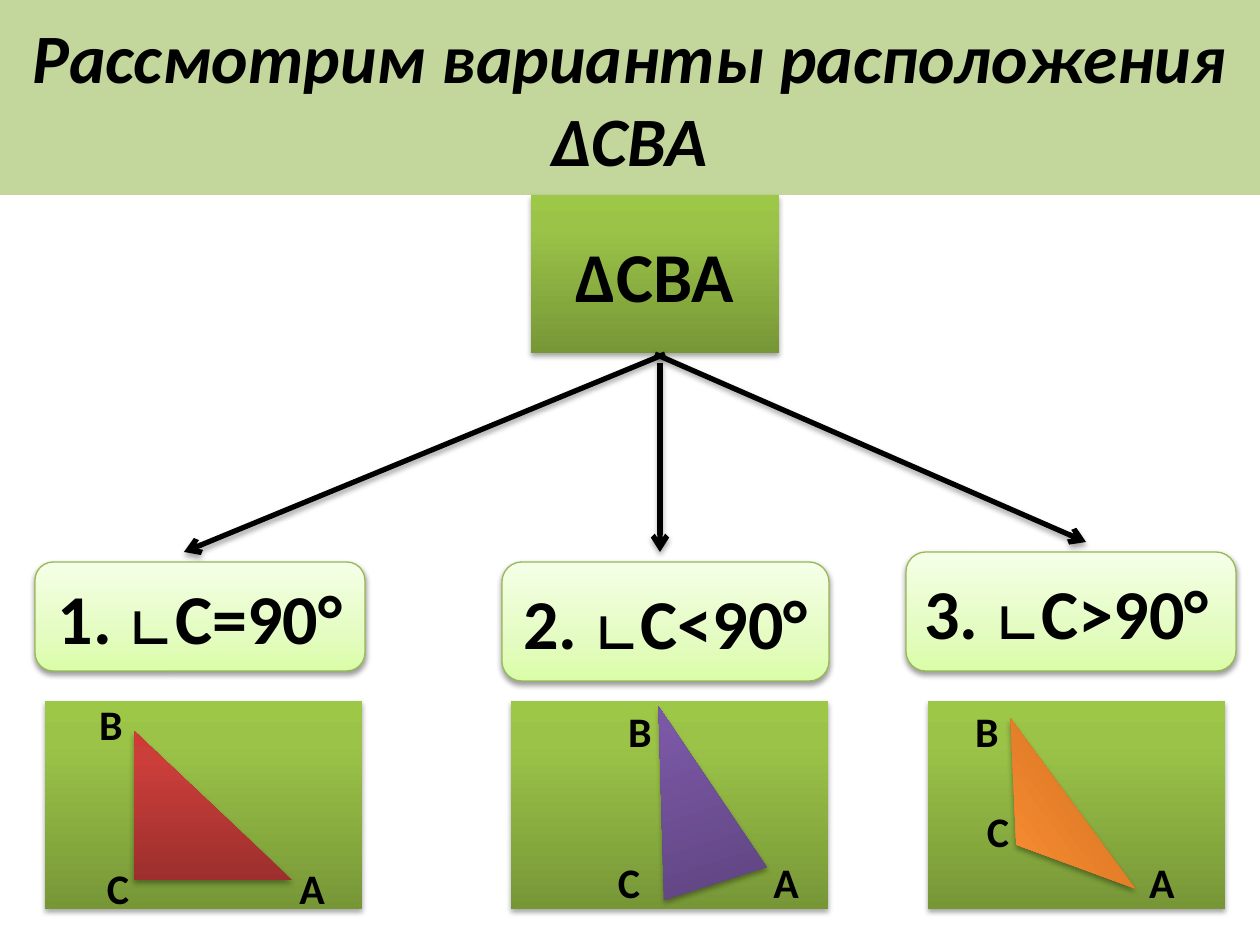
"""Build the slide that shows three possible positions of the triangle ΔCBA."""
from dataclasses import dataclass

from lxml import etree
from pptx import Presentation
from pptx.dml.color import RGBColor
from pptx.enum.shapes import MSO_CONNECTOR, MSO_SHAPE
from pptx.enum.text import MSO_ANCHOR, PP_ALIGN
from pptx.oxml.ns import qn
from pptx.util import Emu, Pt

RECTANGLE = MSO_SHAPE.RECTANGLE
ROUNDED = MSO_SHAPE.ROUNDED_RECTANGLE
TRIANGLE = MSO_SHAPE.ISOSCELES_TRIANGLE
RIGHT_TRIANGLE = MSO_SHAPE.RIGHT_TRIANGLE
STRAIGHT = MSO_CONNECTOR.STRAIGHT
MIDDLE = MSO_ANCHOR.MIDDLE
CENTER = PP_ALIGN.CENTER
LEFT = PP_ALIGN.LEFT

EMU_PER_PX = 914400 / 126
FONT = "Calibri"
COLORS = {"black": "000000", "title": "C3D69B", "case_line": "98B955"}
GRADIENTS = {
    "green": {0: "779737", 80: "9BC348", 100: "9DC746"},
    "red": {0: "9C2F2D", 80: "CB3E3A", 100: "CE3B37"},
    "purple": {0: "5F4480", 80: "7B58A6", 100: "7C57A8"},
    "orange": {0: "CC6E20", 80: "FF9034", 100: "FF9136"},
    "pale": {0: "DAFDA7", 35: "E4FCC2", 100: "F5FFE7"},
}


@dataclass(frozen=True)
class Box:
    left: int
    top: int
    width: int
    height: int


@dataclass(frozen=True)
class Case:
    caption: str
    alignment: PP_ALIGN
    caption_box: Box
    panel: Box
    triangle_kind: MSO_SHAPE
    triangle: Box
    rotation: float
    gradient: str
    vertices: dict[str, tuple[int, int]]
    arrow: tuple[int, int, int, int]


CASES = [
    Case("1. ∟С=90°", CENTER, Box(35, 562, 330, 109), Box(45, 701, 317, 208),
         RIGHT_TRIANGLE, Box(134, 731, 158, 149), 0, "red",
         {"B": (111, 725), "C": (118, 889), "A": (312, 889)}, (665, 354, 184, 552)),
    Case("2. ∟С<90°", CENTER, Box(502, 562, 327, 119), Box(511, 701, 317, 208),
         TRIANGLE, Box(633, 702, 108, 186), 342.2, "purple",
         {"B": (640, 732), "C": (629, 883), "A": (786, 883)}, (660, 363, 660, 552)),
    Case("3. ∟С>90°", LEFT, Box(906, 552, 330, 119), Box(928, 701, 297, 208),
         TRIANGLE, Box(939, 789, 211, 70), 233.8, "orange",
         {"B": (987, 732), "C": (998, 832), "A": (1162, 883)}, (655, 354, 1086, 542)),
]


def px(length: int) -> Emu:
    """Turn pixels into EMU."""
    return Emu(round(length * EMU_PER_PX))


def add_shadow(shape, alpha: int = 35) -> None:
    """Give a shape or connector a soft shadow below it."""
    effects = etree.SubElement(shape.element.spPr, qn("a:effectLst"))
    shadow = etree.SubElement(effects, qn("a:outerShdw"), blurRad="40000",
                              dist="23000", dir="5400000", rotWithShape="0")
    color = etree.SubElement(shadow, qn("a:srgbClr"), val=COLORS["black"])
    etree.SubElement(color, qn("a:alpha"), val=str(alpha * 1000))


def fill_gradient(shape, name: str) -> None:
    """Fill a shape with a named gradient that rises from its lower edge."""
    shape.fill.gradient()
    shape.fill.gradient_angle = 90
    stops = shape.element.spPr.find(qn("a:gradFill")).find(qn("a:gsLst"))
    for stop in list(stops):
        stops.remove(stop)
    for position, color in GRADIENTS[name].items():
        stop = etree.SubElement(stops, qn("a:gs"), pos=str(position * 1000))
        etree.SubElement(stop, qn("a:srgbClr"), val=color)


def add_box(slide, kind: MSO_SHAPE, box: Box, gradient: str, *,
            line: str | None = None, rotation: float = 0, alpha: int = 35):
    """Add a preset shape with a gradient fill and a shadow."""
    shape = slide.shapes.add_shape(kind, px(box.left), px(box.top),
                                   px(box.width), px(box.height))
    shape.rotation = rotation
    fill_gradient(shape, gradient)
    if line:
        shape.line.color.rgb = RGBColor.from_string(COLORS[line])
        shape.line.width = Pt(0.75)
    else:
        shape.line.fill.background()
    add_shadow(shape, alpha)
    return shape


def write_text(shape, text: str, *, size: float = 40, italic: bool = False,
               alignment: PP_ALIGN = CENTER) -> None:
    """Write bold black text in the middle of a shape."""
    frame = shape.text_frame
    frame.word_wrap = True
    frame.vertical_anchor = MIDDLE
    paragraph = frame.paragraphs[0]
    paragraph.text = text
    paragraph.alignment = alignment
    font = paragraph.font
    font.name, font.size, font.bold, font.italic = FONT, Pt(size), True, italic
    font.color.rgb = RGBColor.from_string(COLORS["black"])


def add_title(slide, text: str) -> None:
    """Add the title band across the top of the slide."""
    band = slide.shapes.add_shape(RECTANGLE, 0, 0, px(1260), px(195))
    band.shadow.inherit = False
    band.fill.solid()
    band.fill.fore_color.rgb = RGBColor.from_string(COLORS["title"])
    band.line.fill.background()
    write_text(band, text, size=39.6, italic=True)


def add_arrow(slide, start_x: int, start_y: int, end_x: int, end_y: int) -> None:
    """Add a thick black arrow between two points."""
    arrow = slide.shapes.add_connector(STRAIGHT, px(start_x), px(start_y),
                                       px(end_x), px(end_y))
    arrow.line.color.rgb = RGBColor.from_string(COLORS["black"])
    arrow.line.width = Pt(3)
    etree.SubElement(arrow.element.spPr.find(qn("a:ln")), qn("a:tailEnd"), type="arrow")
    add_shadow(arrow)


def add_vertex(slide, letter: str, center_x: int, center_y: int) -> None:
    """Add the letter of a vertex, centred on a point."""
    label = slide.shapes.add_textbox(px(center_x - 25), px(center_y - 27), px(50), px(52))
    frame = label.text_frame
    frame.margin_left = frame.margin_right = frame.margin_top = frame.margin_bottom = 0
    write_text(label, letter, size=24)


def add_case(slide, case: Case) -> None:
    """Add one case: arrow, caption, panel and lettered triangle."""
    add_arrow(slide, *case.arrow)
    caption = add_box(slide, ROUNDED, case.caption_box, "pale", line="case_line", alpha=38)
    write_text(caption, case.caption, alignment=case.alignment)
    add_box(slide, RECTANGLE, case.panel, "green")
    add_box(slide, case.triangle_kind, case.triangle, case.gradient, rotation=case.rotation)
    for letter, center in case.vertices.items():
        add_vertex(slide, letter, *center)


def main() -> None:
    """Build and save the presentation."""
    presentation = Presentation()
    presentation.slide_width, presentation.slide_height = px(1260), px(945)
    slide = presentation.slides.add_slide(presentation.slide_layouts[6])
    add_title(slide, "Рассмотрим варианты расположения ΔCBA")
    root = add_box(slide, RECTANGLE, Box(531, 195, 248, 158), "green")
    write_text(root, "ΔCBA")
    for case in CASES:
        add_case(slide, case)
    presentation.save("out.pptx")


if __name__ == "__main__":
    main()
